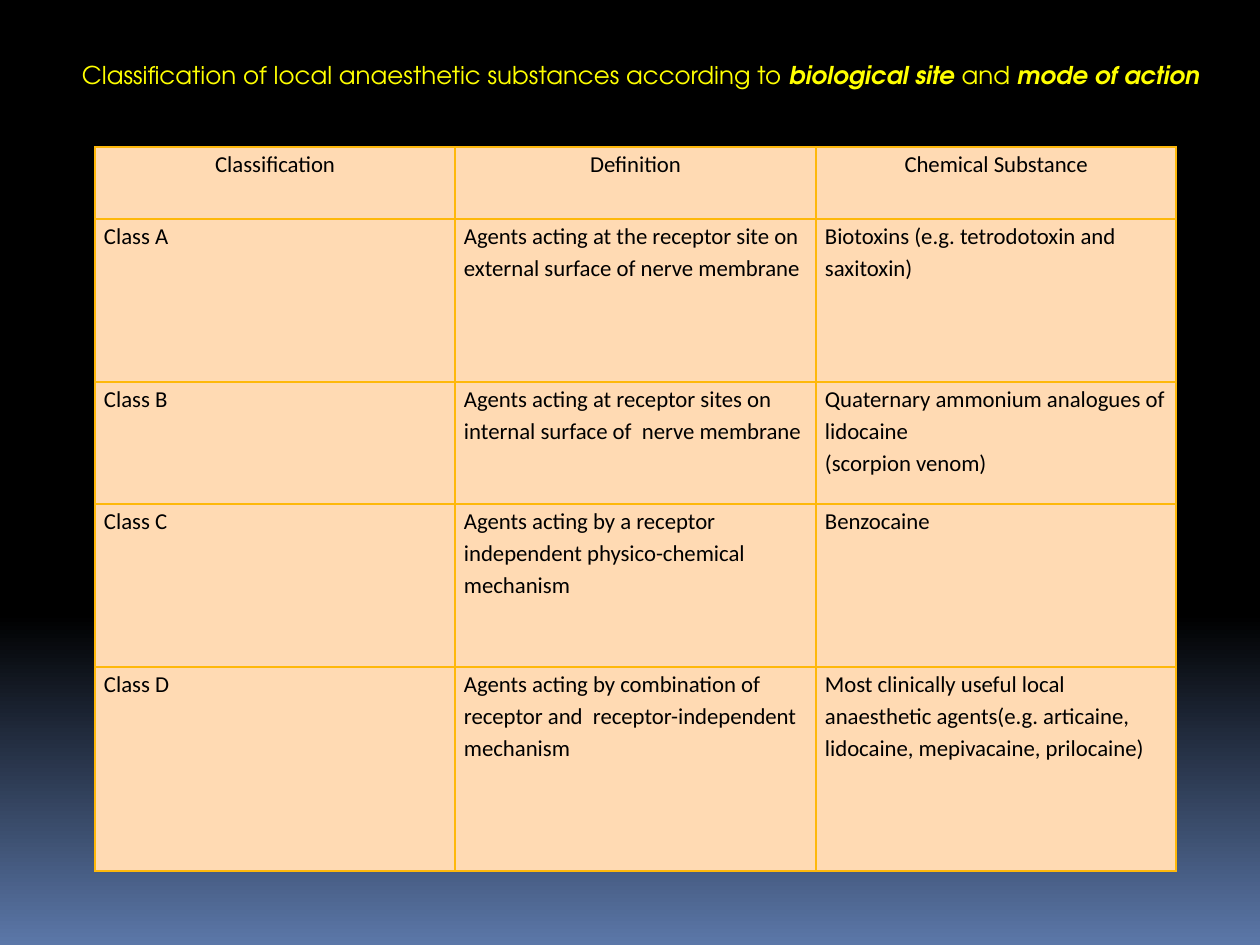
from lxml import etree
from pptx import Presentation
from pptx.dml.color import RGBColor
from pptx.enum.text import MSO_ANCHOR, PP_ALIGN
from pptx.oxml.ns import qn
from pptx.util import Emu, Pt

LEFT, CENTER = PP_ALIGN.LEFT, PP_ALIGN.CENTER
MIDDLE = MSO_ANCHOR.MIDDLE
TITLE_ONLY = 5
EMU_PER_PX = 914400 / 126

COLORS = {
    "night": "000000",
    "dusk": "5B77A8",
    "title": "FFFF00",
    "cell": "FFDAB3",
    "border": "FEB80A",
    "text": "000000",
}

TITLE_RUNS = [
    ("Classification of local anaesthetic substances according to", False),
    (" biological site", True),
    (" and ", False),
    ("mode of action", True),
]

COLUMN_WIDTHS = [360, 361, 360]
ROW_HEIGHTS = [72, 163, 122, 163, 204]
CLASSES = [
    ("Classification", "Definition", "Chemical Substance"),
    ("Class A",
     "Agents acting at the receptor site on external surface of nerve membrane",
     "Biotoxins (e.g. tetrodotoxin and saxitoxin)"),
    ("Class B",
     "Agents acting at receptor sites on internal surface of  nerve membrane",
     "Quaternary ammonium analogues of lidocaine\n(scorpion venom)"),
    ("Class C",
     "Agents acting by a receptor independent physico-chemical mechanism",
     "Benzocaine"),
    ("Class D",
     "Agents acting by combination of receptor and  receptor-independent  mechanism",
     "Most clinically useful local anaesthetic agents(e.g. articaine, lidocaine, "
     "mepivacaine, prilocaine)"),
]


def px(length):
    return Emu(round(length * EMU_PER_PX))


def color(name):
    return RGBColor.from_string(COLORS[name])


def set_font(font, name, size, color_name):
    font.name = name
    font.size = Pt(size)
    font.color.rgb = color(color_name)


def paint_background(slide):
    fill = slide.background.fill
    fill.gradient()
    fill.gradient_angle = 270
    for stop, position, name in zip(fill.gradient_stops, (0.65, 1), ("night", "dusk")):
        stop.position = position
        stop.color.rgb = color(name)


def write_title(title):
    title.left, title.top, title.width, title.height = map(px, (0, 53, 1243, 43))
    frame = title.text_frame
    frame.word_wrap = True
    frame.vertical_anchor = MIDDLE
    frame.margin_left = px(82)
    frame.margin_right = px(12)
    heading = frame.paragraphs[0]
    heading.alignment = LEFT
    set_font(heading.font, "TeX Gyre Adventor", 14, "title")
    for text, emphasized in TITLE_RUNS:
        run = heading.add_run()
        run.text = text
        run.font.bold = run.font.italic = emphasized


def draw_borders(cell):
    properties = cell._tc.get_or_add_tcPr()
    for index, side in enumerate(("a:lnL", "a:lnR", "a:lnT", "a:lnB")):
        line = etree.Element(qn(side), w=str(Pt(0.94)))
        fill = etree.SubElement(line, qn("a:solidFill"))
        etree.SubElement(fill, qn("a:srgbClr"), val=COLORS["border"])
        properties.insert(index, line)


def write_cell(cell, text, alignment):
    cell.fill.solid()
    cell.fill.fore_color.rgb = color("cell")
    cell.margin_left = cell.margin_right = px(9)
    cell.margin_top = cell.margin_bottom = 0
    draw_borders(cell)
    cell.text = text
    for paragraph in cell.text_frame.paragraphs:
        paragraph.alignment = alignment
        paragraph.line_spacing = 1.15
        set_font(paragraph.font, "Calibri", 13, "text")


def add_class_table(slide):
    table = slide.shapes.add_table(
        len(ROW_HEIGHTS), len(COLUMN_WIDTHS), px(95), px(147),
        px(sum(COLUMN_WIDTHS)), px(sum(ROW_HEIGHTS))).table
    table.first_row = table.horz_banding = False
    for column, width in zip(table.columns, COLUMN_WIDTHS):
        column.width = px(width)
    for index, (row, height, texts) in enumerate(zip(table.rows, ROW_HEIGHTS, CLASSES)):
        row.height = px(height)
        for cell, text in zip(row.cells, texts):
            write_cell(cell, text, LEFT if index else CENTER)


def main():
    presentation = Presentation()
    presentation.slide_width, presentation.slide_height = px(1260), px(945)
    slide = presentation.slides.add_slide(presentation.slide_layouts[TITLE_ONLY])
    paint_background(slide)
    write_title(slide.shapes.title)
    add_class_table(slide)
    presentation.save("out.pptx")


if __name__ == "__main__":
    main()
